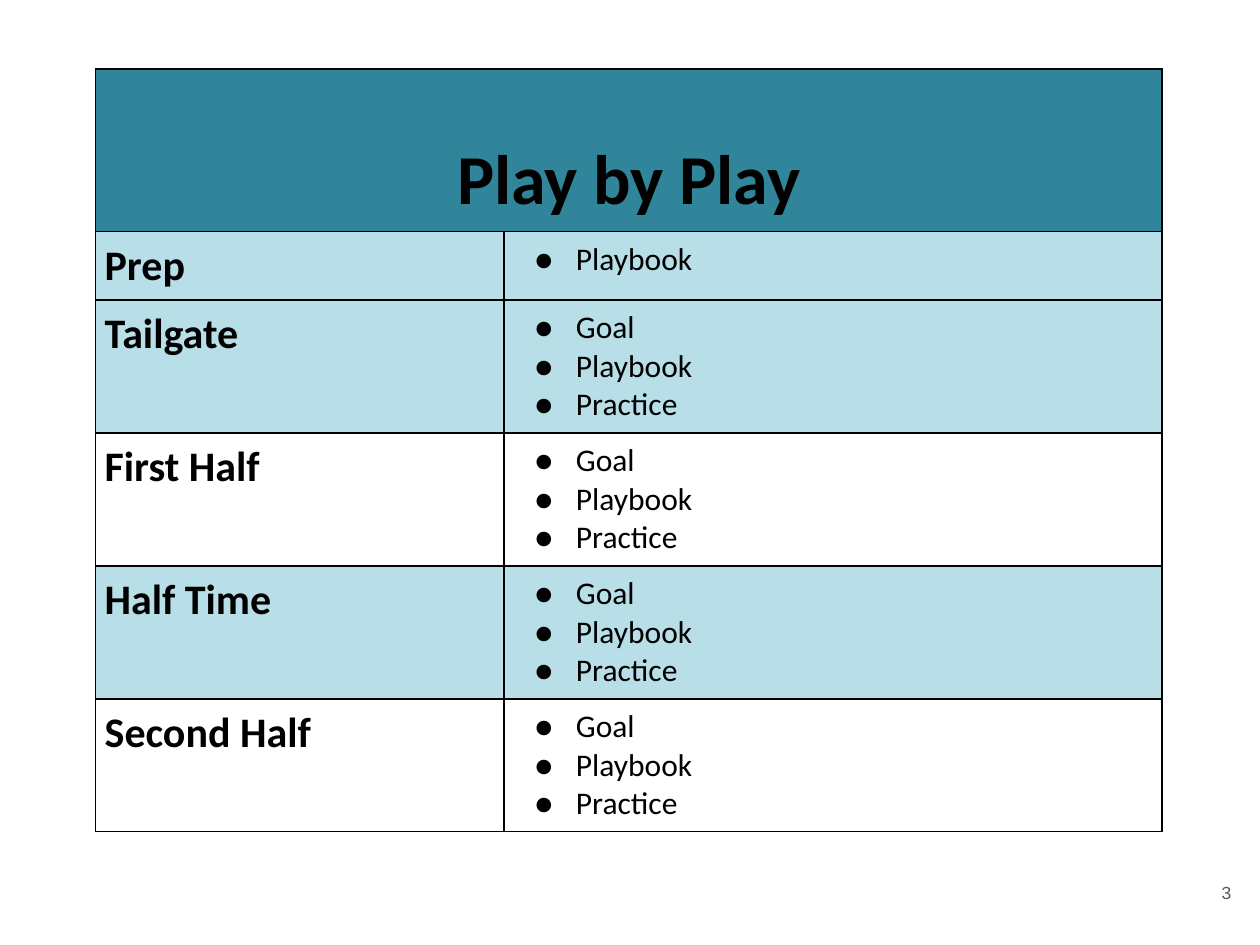
from typing import NamedTuple

from lxml import etree
from pptx import Presentation
from pptx.dml.color import RGBColor
from pptx.enum.text import MSO_ANCHOR, PP_ALIGN
from pptx.oxml.ns import qn
from pptx.util import Cm, Pt

LEFT, MID, RIGHT = PP_ALIGN.LEFT, PP_ALIGN.CENTER, PP_ALIGN.RIGHT
TOP, CENTRE, BOTTOM = MSO_ANCHOR.TOP, MSO_ANCHOR.MIDDLE, MSO_ANCHOR.BOTTOM

BLACK, WHITE, GREY = "000000", "FFFFFF", "595959"
TEAL, PALE = "31859B", "B8DFE7"
PAD = Cm(0.18)
WIDTHS = (8.23, 13.26)
HEAD = 3.28


class Phase(NamedTuple):
    name: str
    steps: tuple[str, ...]
    fill: str
    height: float = 2.68


FULL = ("Goal", "Playbook", "Practice")
PHASES = (
    Phase("Prep", ("Playbook",), PALE, 1.37),
    Phase("Tailgate", FULL, PALE),
    Phase("First Half", FULL, WHITE),
    Phase("Half Time", FULL, PALE),
    Phase("Second Half", FULL, WHITE),
)


def rgb(code: str) -> RGBColor:
    return RGBColor.from_string(code)


def add_run(para, text: str, size: float, bold: bool = False,
            face: str = "Calibri", color: str = BLACK) -> None:
    run = para.add_run()
    run.text = text
    font = run.font
    font.name, font.size, font.bold = face, Pt(size), bold
    font.color.rgb = rgb(color)


def add_mark(para) -> None:
    """Give the paragraph a hanging round bullet."""
    props = para._p.get_or_add_pPr()
    props.set("marL", str(Cm(1.27)))
    props.set("indent", str(-Cm(0.84)))
    tint = etree.SubElement(props, qn("a:buClr"))
    etree.SubElement(tint, qn("a:srgbClr"), val=BLACK)
    etree.SubElement(props, qn("a:buFont"), typeface="Calibri")
    etree.SubElement(props, qn("a:buChar"), char="●")


def style_cell(cell, fill: str, anchor=TOP) -> None:
    """Set the padding, fill and thin black border on all four sides."""
    cell.margin_left = cell.margin_right = PAD
    cell.margin_top = cell.margin_bottom = PAD
    cell.vertical_anchor = anchor
    cell.fill.solid()
    cell.fill.fore_color.rgb = rgb(fill)
    props = cell._tc.get_or_add_tcPr()
    for spot, side in enumerate("LRTB"):
        line = etree.Element(qn(f"a:ln{side}"), w=str(Pt(1)))
        solid = etree.SubElement(line, qn("a:solidFill"))
        etree.SubElement(solid, qn("a:srgbClr"), val=BLACK)
        props.insert(spot, line)


def fill_row(table, index: int, phase: Phase) -> None:
    table.rows[index].height = Cm(phase.height)
    name, steps = table.cell(index, 0), table.cell(index, 1)
    for cell in (name, steps):
        style_cell(cell, phase.fill)
    add_run(name.text_frame.paragraphs[0], phase.name, 24, True)
    frame = steps.text_frame
    for spot, step in enumerate(phase.steps):
        para = frame.add_paragraph() if spot else frame.paragraphs[0]
        add_mark(para)
        add_run(para, step, 18)


def add_plan(slide) -> None:
    """Draw the table with its merged heading and one row per phase."""
    high = HEAD + sum(phase.height for phase in PHASES)
    table = slide.shapes.add_table(
        len(PHASES) + 1, len(WIDTHS), Cm(1.93), Cm(1.39),
        Cm(sum(WIDTHS)), Cm(high)).table
    for col, width in zip(table.columns, WIDTHS):
        col.width = Cm(width)
    table.rows[0].height = Cm(HEAD)
    head, rest = table.cell(0, 0), table.cell(0, 1)
    for cell in (head, rest):
        style_cell(cell, TEAL, BOTTOM)
    head.merge(rest)
    para = head.text_frame.paragraphs[0]
    para.alignment = MID
    add_run(para, "Play by Play", 40, True)
    for index, phase in enumerate(PHASES, 1):
        fill_row(table, index, phase)


def add_number(slide) -> None:
    box = slide.shapes.add_textbox(Cm(23.55), Cm(17.27), Cm(1.52), Cm(1.45))
    frame = box.text_frame
    frame.word_wrap = True
    frame.vertical_anchor = CENTRE
    frame.margin_left = frame.margin_right = Cm(0.25)
    frame.margin_top = frame.margin_bottom = Cm(0.25)
    para = frame.paragraphs[0]
    para.alignment = RIGHT
    add_run(para, "3", 10, face="Arial", color=GREY)


def main() -> None:
    deck = Presentation()
    deck.slide_width, deck.slide_height = Cm(25.4), Cm(19.05)
    slide = deck.slides.add_slide(deck.slide_layouts[6])
    add_number(slide)
    add_plan(slide)
    deck.save("out.pptx")


if __name__ == "__main__":
    main()
